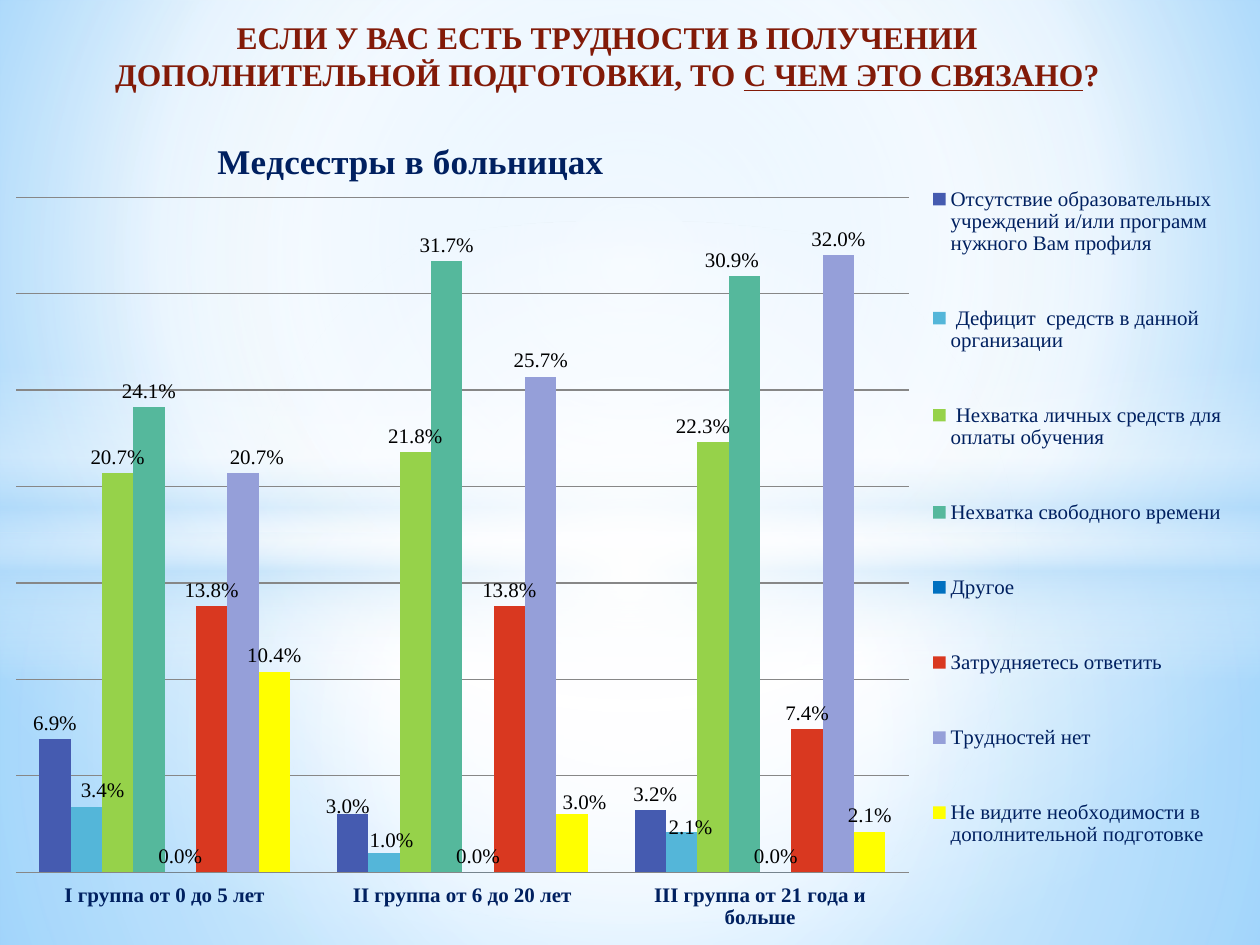
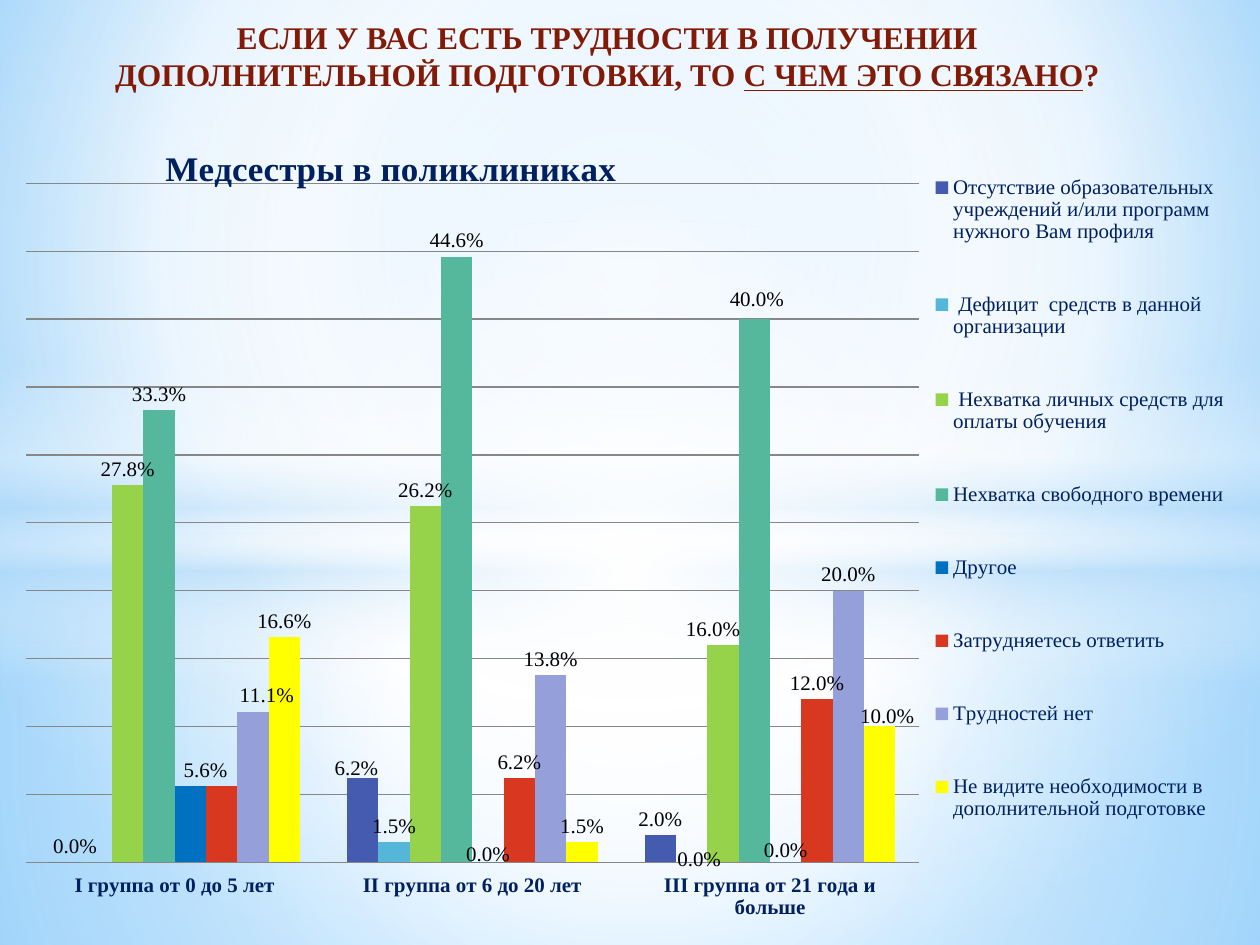
from lxml import etree
from pptx import Presentation
from pptx.chart.data import CategoryChartData
from pptx.dml.color import RGBColor
from pptx.enum.chart import (XL_CHART_TYPE, XL_LABEL_POSITION, XL_LEGEND_POSITION,
                             XL_TICK_LABEL_POSITION, XL_TICK_MARK)
from pptx.enum.shapes import MSO_SHAPE
from pptx.enum.text import MSO_AUTO_SIZE, PP_ALIGN
from pptx.oxml.ns import qn
from pptx.util import Inches, Pt

RECTANGLE, ELLIPSE = MSO_SHAPE.RECTANGLE, MSO_SHAPE.OVAL
OUTSIDE_END = XL_LABEL_POSITION.OUTSIDE_END
NO_TICKS = XL_TICK_MARK.NONE
FONT = "Times New Roman"
PERCENT = "0.0%"

COLORS = {
    "heading": "821A08", "navy": "002060", "black": "000000", "grid": "878787",
    "white": "FFFFFF", "haze": "B4DCFA", "sky": "9ED5FF", "deep_sky": "5BB9FF",
    "indigo": "455BB0", "cyan": "54B6D9", "lime": "96D24A", "teal": "55B89C",
    "blue": "0070C0", "red": "D93820", "lavender": "959FD9", "yellow": "FFFF00",
}

HEADING = [
    ("ЕСЛИ У ВАС ЕСТЬ ТРУДНОСТИ В ПОЛУЧЕНИИ ДОПОЛНИТЕЛЬНОЙ ПОДГОТОВКИ, ТО ", False),
    ("С ЧЕМ ЭТО СВЯЗАНО", True),
    ("?", False),
]
GROUPS = ["I группа от 0 до 5 лет", "II группа от 6 до 20 лет",
          "III группа от 21 года и больше"]
REASONS = [
    ("Отсутствие образовательных учреждений и/или программ нужного Вам профиля", "indigo"),
    (" Дефицит  средств в данной организации", "cyan"),
    (" Нехватка личных средств для оплаты обучения", "lime"),
    ("Нехватка свободного времени", "teal"),
    ("Другое", "blue"),
    ("Затрудняетесь ответить", "red"),
    ("Трудностей нет", "lavender"),
    ("Не видите необходимости в дополнительной подготовке", "yellow"),
]

# Gradient stops are (position %, colour, opacity %); a centre is left, top, right, bottom %.
MIDDLE = (50, 50, 50, 50)
BACKDROP = ([(0, "sky", 100), (60, "white", 100), (100, "deep_sky", 100)], (20, 10, 20, 60))
LIGHTS = [
    (RECTANGLE, (0, 4.23, 10, 3.27),
     [(0, "white", 91), (37, "white", 76), (100, "haze", 79)], MIDDLE),
    (RECTANGLE, (0, 0, 10, 4.23),
     [(0, "white", 89), (48, "white", 62), (100, "haze", 79)], MIDDLE),
    (RECTANGLE, (0, 2.9, 10, 2.5),
     [(0, "white", 0), (29, "white", 30), (45, "haze", 40), (55, "white", 26),
      (65, "haze", 60), (100, "white", 0)], None),
    (ELLIPSE, (0, 1.75, 10, 5.58), [(0, "white", 100), (54, "white", 0)], MIDDLE),
]

# Values are percentages by reason; label moves are (reason, group): (right, down) in inches.
SURVEYS = [
    {
        "title": "Медсестры в больницах", "box": (0.12, 0.86, 9.69, 6.51), "maximum": 0.35,
        "title_at": (0.16, 0.03), "plot": (0, 0.11, 0.732, 0.834),
        "legend": (0.743, 0.033, 0.254, 0.944),
        "values": [(6.9, 3.0, 3.2), (3.4, 1.0, 2.1), (20.7, 21.8, 22.3), (24.1, 31.7, 30.9),
                   (0, 0, 0), (13.8, 13.8, 7.4), (20.7, 25.7, 32.0), (10.4, 3.0, 2.1)],
        "moves": {(0, 1): (-0.04, 0.06), (0, 2): (0.04, 0), (1, 0): (0.13, 0),
                  (1, 1): (0.06, 0.03), (1, 2): (0.07, 0.09), (2, 2): (-0.08, 0),
                  (3, 2): (-0.1, 0), (6, 0): (0.11, 0), (7, 1): (0.1, 0.03)},
        "unlabelled": [],
    },
    {
        "title": "Медсестры в поликлиниках", "box": (0.2, 0.99, 9.61, 6.3), "maximum": 0.5,
        "title_at": (0.11, 0.02), "plot": (0, 0.075, 0.738, 0.87),
        "legend": (0.744, 0.001, 0.254, 0.955),
        "values": [(0, 6.2, 2.0), (0, 1.5, 0), (27.8, 26.2, 16.0), (33.3, 44.6, 40.0),
                   (5.6, 0, 0), (5.6, 6.2, 12.0), (11.1, 13.8, 20.0), (16.6, 1.5, 10.0)],
        "moves": {(0, 0): (0.08, 0), (0, 1): (-0.05, 0.05), (1, 2): (0.06, 0.1),
                  (2, 2): (-0.08, 0), (3, 2): (0.02, -0.03), (4, 0): (0.12, 0),
                  (4, 1): (0, 0.06), (4, 2): (0, 0.03), (6, 0): (0.11, 0),
                  (7, 2): (0.06, 0.05)},
        "unlabelled": [(1, 0), (5, 0)],
    },
]


def rgb(name):
    return RGBColor.from_string(COLORS[name])


def style_font(font, size=12, color="black", bold=False, underline=False):
    font.name, font.size = FONT, Pt(size)
    font.bold, font.underline = bold, underline
    font.color.rgb = rgb(color)


def add_text(paragraph, text, **style):
    run = paragraph.add_run()
    run.text = text
    style_font(run.font, **style)


def set_gradient(properties, stops, centre):
    """Replace a solid fill by a gradient, circular or, without a centre, vertical."""
    gradient = etree.Element(qn("a:gradFill"), rotWithShape="1")
    stop_list = etree.SubElement(gradient, qn("a:gsLst"))
    for position, color, opacity in stops:
        stop = etree.SubElement(stop_list, qn("a:gs"), pos=str(position * 1000))
        value = etree.SubElement(stop, qn("a:srgbClr"), val=COLORS[color])
        if opacity < 100:
            etree.SubElement(value, qn("a:alpha"), val=str(opacity * 1000))
    if centre:
        circle = etree.SubElement(gradient, qn("a:path"))
        circle.set("path", "circle")
        sides = {side: str(part * 1000) for side, part in zip("ltrb", centre)}
        etree.SubElement(circle, qn("a:fillToRect"), **sides)
    else:
        etree.SubElement(gradient, qn("a:lin"), ang="5400000", scaled="0")
    properties.replace(properties.find(qn("a:solidFill")), gradient)


def set_layout(parent, index, place, edge=True, inner=False):
    """Place a chart part by fractions of the chart, from its edge or from its usual place."""
    previous = parent.find(qn("c:layout"))
    if previous is not None:
        parent.remove(previous)
    layout = etree.Element(qn("c:layout"))
    manual = etree.SubElement(layout, qn("c:manualLayout"))
    settings = [("layoutTarget", "inner")] if inner else []
    if edge:
        settings += [("xMode", "edge"), ("yMode", "edge")]
    settings += zip("xywh", place)
    for tag, value in settings:
        etree.SubElement(manual, qn("c:" + tag), val=str(value))
    parent.insert(index, layout)


def add_backdrop(slide):
    slide.background.fill.solid()
    set_gradient(slide.element.find(".//" + qn("p:bgPr")), *BACKDROP)
    for kind, box, stops, centre in LIGHTS:
        light = slide.shapes.add_shape(kind, *map(Inches, box))
        light.shadow.inherit = False
        light.line.fill.background()
        light.fill.solid()
        set_gradient(light.element.spPr, stops, centre)


def add_heading(slide):
    box = slide.shapes.add_textbox(*map(Inches, (0.59, 0.09, 8.46, 0.71)))
    frame = box.text_frame
    frame.word_wrap = True
    frame.auto_size = MSO_AUTO_SIZE.SHAPE_TO_FIT_TEXT
    paragraph = frame.paragraphs[0]
    paragraph.alignment = PP_ALIGN.CENTER
    for text, underline in HEADING:
        add_text(paragraph, text, size=18, color="heading", bold=True, underline=underline)


def style_axes(chart, maximum):
    values, groups = chart.value_axis, chart.category_axis
    values.minimum_scale, values.maximum_scale, values.major_unit = 0, maximum, 0.05
    values.visible = False
    values.has_major_gridlines = True
    groups.major_tick_mark = groups.minor_tick_mark = NO_TICKS
    groups.tick_label_position = XL_TICK_LABEL_POSITION.LOW
    style_font(groups.tick_labels.font, color="navy", bold=True)
    for line in (values.major_gridlines.format.line, groups.format.line):
        line.color.rgb = rgb("grid")
        line.width = Pt(0.75)


def style_series(chart, survey):
    width, height = survey["box"][2:]
    for reason, (series, (_, color)) in enumerate(zip(chart.plots[0].series, REASONS)):
        series.format.fill.solid()
        series.format.fill.fore_color.rgb = rgb(color)
        series.invert_if_negative = False
        labels = series.data_labels
        labels.show_value = True
        labels.number_format, labels.number_format_is_linked = PERCENT, False
        labels.position = OUTSIDE_END
        style_font(labels.font)
        for group in range(len(GROUPS)):
            move = survey["moves"].get((reason, group))
            hidden = (reason, group) in survey["unlabelled"]
            if not (move or hidden):
                continue
            point_label = series.points[group].data_label
            point_label.position = OUTSIDE_END
            style_font(point_label.font)
            label = chart.element.xpath(
                f"//c:ser[c:idx/@val={reason}]/c:dLbls/c:dLbl[c:idx/@val={group}]")[0]
            if hidden:
                for part in label[1:]:
                    label.remove(part)
                etree.SubElement(label, qn("c:delete"), val="1")
            else:
                right, down = move
                place = round(right / width, 4), round(down / height, 4)
                set_layout(label, 1, place, edge=False)


def add_survey_chart(slide, survey):
    data = CategoryChartData(number_format=PERCENT)
    data.categories = GROUPS
    for (reason, _), values in zip(REASONS, survey["values"]):
        data.add_series(reason, [round(value / 100, 3) for value in values])
    chart = slide.shapes.add_chart(
        XL_CHART_TYPE.COLUMN_CLUSTERED, *map(Inches, survey["box"]), data).chart
    style_font(chart.font)
    plot = chart.plots[0]
    plot.gap_width, plot.overlap, plot.vary_by_categories = 150, 0, False
    style_axes(chart, survey["maximum"])
    style_series(chart, survey)

    chart.has_title = True
    add_text(chart.chart_title.text_frame.paragraphs[0], survey["title"],
             size=20, color="navy", bold=True)
    chart.has_legend = True
    chart.legend.position = XL_LEGEND_POSITION.RIGHT
    chart.legend.include_in_layout = False
    style_font(chart.legend.font, color="navy")

    area = chart.element.chart
    set_layout(area.find(qn("c:title")), 1, survey["title_at"])
    set_layout(area.find(qn("c:legend")), 1, survey["legend"])
    set_layout(area.find(qn("c:plotArea")), 0, survey["plot"], inner=True)


def main():
    presentation = Presentation()
    presentation.slide_width, presentation.slide_height = Inches(10), Inches(7.5)
    for survey in SURVEYS:
        slide = presentation.slides.add_slide(presentation.slide_layouts[6])
        add_backdrop(slide)
        add_survey_chart(slide, survey)
        add_heading(slide)
    presentation.save("out.pptx")


if __name__ == "__main__":
    main()
